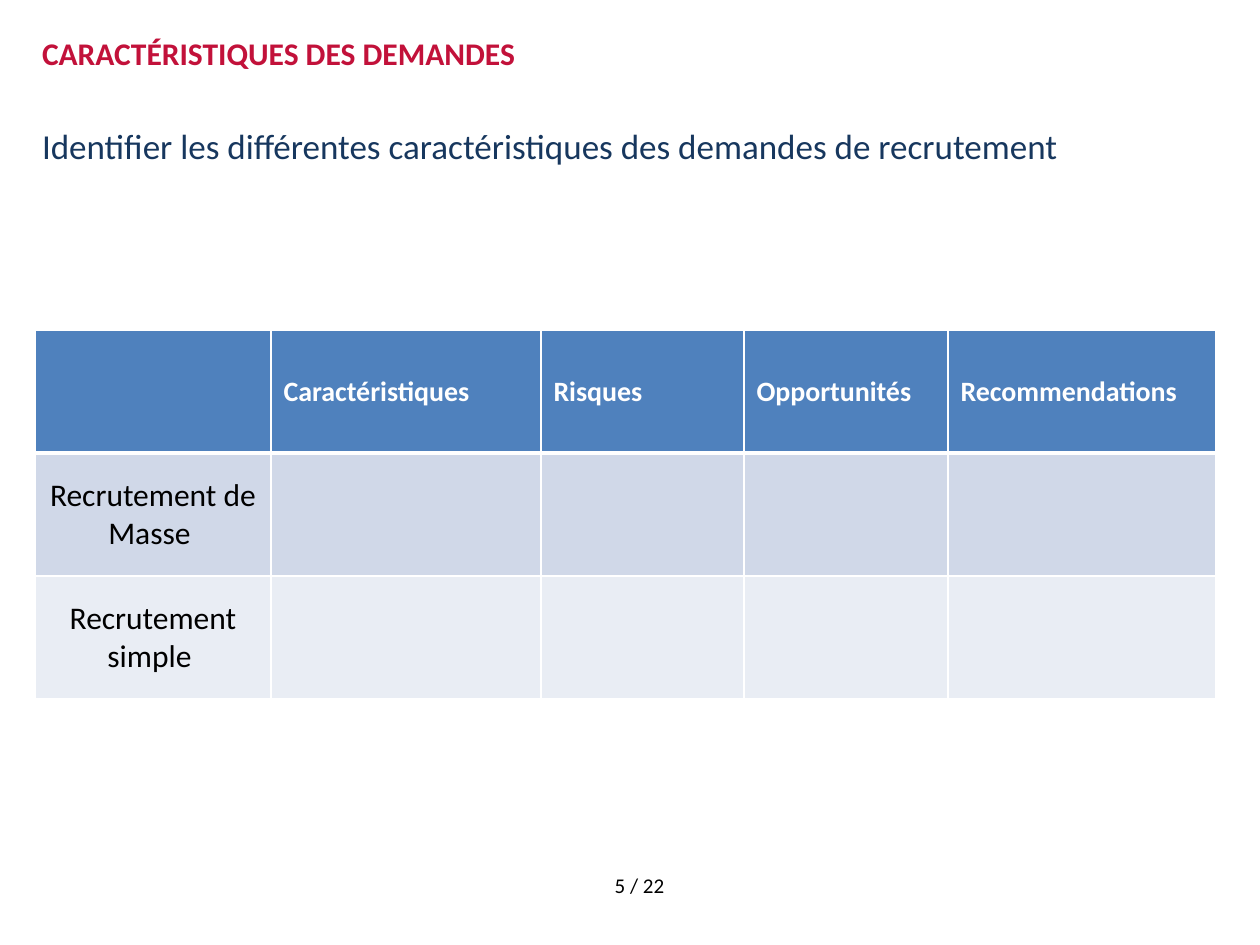
from lxml import etree
from pptx import Presentation
from pptx.dml.color import RGBColor
from pptx.enum.shapes import MSO_SHAPE
from pptx.enum.text import MSO_ANCHOR as Anchor, MSO_AUTO_SIZE as AutoSize, PP_ALIGN as Align
from pptx.oxml.ns import qn
from pptx.util import Emu, Pt

WHITE = RGBColor(0xFF, 0xFF, 0xFF)
BLACK = RGBColor(0x00, 0x00, 0x00)
RED = RGBColor(0xC2, 0x11, 0x3A)
NAVY = RGBColor(0x17, 0x37, 0x5E)
HEADER_BLUE = RGBColor(0x4F, 0x81, 0xBD)
BAND_DARK = RGBColor(0xD0, 0xD8, 0xE8)
BAND_LIGHT = RGBColor(0xE9, 0xED, 0xF4)

EMU_PER_PX = 914400 / 126


def px(length):
    return Emu(round(length * EMU_PER_PX))


class SlideBuilder:
    font_name = "Calibri"

    def __init__(self, deck):
        self.page = deck.slides.add_slide(deck.slide_layouts[5])

    def style(self, para, size, color, bold=False, align=Align.LEFT):
        para.alignment = align
        for run in para.runs:
            run.font.name = self.font_name
            run.font.size = Pt(size)
            run.font.bold = bold
            run.font.color.rgb = color

    def fill_block(self, box, text, size, color, bold=False):
        """White panel with one justified line at its top."""
        box.fill.solid()
        box.fill.fore_color.rgb = WHITE
        box.line.fill.background()
        frame = box.text_frame
        frame.text = text
        frame.word_wrap = True
        frame.auto_size = AutoSize.NONE
        frame.vertical_anchor = Anchor.TOP
        frame.margin_left = frame.margin_top = frame.margin_right = frame.margin_bottom = 0
        para = frame.paragraphs[0]
        para.line_spacing = Pt(20)
        para.space_after = Pt(12)
        self.style(para, size, color, bold, Align.JUSTIFY)

    def title(self, text, left, top, width, height):
        box = self.page.shapes.title
        box.left, box.top, box.width, box.height = map(px, (left, top, width, height))
        self.fill_block(box, text, 18, RED, bold=True)

    def body(self, text, left, top, width, height):
        box = self.page.shapes.add_shape(
            MSO_SHAPE.RECTANGLE, *map(px, (left, top, width, height)))
        box.shadow.inherit = False
        self.fill_block(box, text, 20, NAVY)

    def label(self, text, left, top, width, height):
        box = self.page.shapes.add_textbox(*map(px, (left, top, width, height)))
        box.text_frame.word_wrap = True
        box.text_frame.text = text
        self.style(box.text_frame.paragraphs[0], 12, BLACK, align=Align.CENTER)

    def borders(self, cell, widths):
        properties = cell._tc.get_or_add_tcPr()
        for side, width in widths.items():
            line = etree.SubElement(properties, qn(f"a:ln{side}"), w=str(Pt(width)))
            solid = etree.SubElement(line, qn("a:solidFill"))
            etree.SubElement(solid, qn("a:srgbClr"), val=str(WHITE))

    def table(self, rows, row_fills, column_widths, row_height, left, top):
        frame = self.page.shapes.add_table(
            len(rows), len(column_widths), px(left), px(top),
            px(sum(column_widths)), px(row_height * len(rows)))
        table = frame.table
        for column, width in zip(table.columns, column_widths):
            column.width = px(width)
        for r, (texts, fill) in enumerate(zip(rows, row_fills)):
            table.rows[r].height = px(row_height)
            for c, text in enumerate(texts):
                cell = table.cell(r, c)
                # The rule under the header row is thicker
                self.borders(cell, {"L": 1, "R": 1, "T": 3 if r == 1 else 1,
                                    "B": 3 if r == 0 else 1})
                cell.fill.solid()
                cell.fill.fore_color.rgb = fill
                cell.vertical_anchor = Anchor.MIDDLE
                if not text:
                    continue
                cell.text = text
                para = cell.text_frame.paragraphs[0]
                if r == 0:
                    self.style(para, 16, WHITE, bold=True)
                else:
                    self.style(para, 18, BLACK, align=Align.CENTER)


def main():
    deck = Presentation()
    deck.slide_width, deck.slide_height = px(1260), px(945)
    slide = SlideBuilder(deck)

    # Heading and instruction
    slide.title("CARACTÉRISTIQUES DES DEMANDES", 42, 37, 1176, 95)
    slide.body("Identifier les différentes caractéristiques des demandes de recrutement",
               42, 132, 1176, 644)

    # Grid to fill in
    headers = ["", "Caractéristiques", "Risques", "Opportunités", "Recommendations"]
    blanks = [""] * (len(headers) - 1)
    slide.table(
        [headers, ["Recrutement de Masse "] + blanks, ["Recrutement simple "] + blanks],
        [HEADER_BLUE, BAND_DARK, BAND_LIGHT],
        [236, 270, 203, 204, 268], 123, 35, 330)

    # Page number
    slide.label("5 / 22", 552, 866, 175, 39)

    deck.save("out.pptx")


if __name__ == "__main__":
    main()
